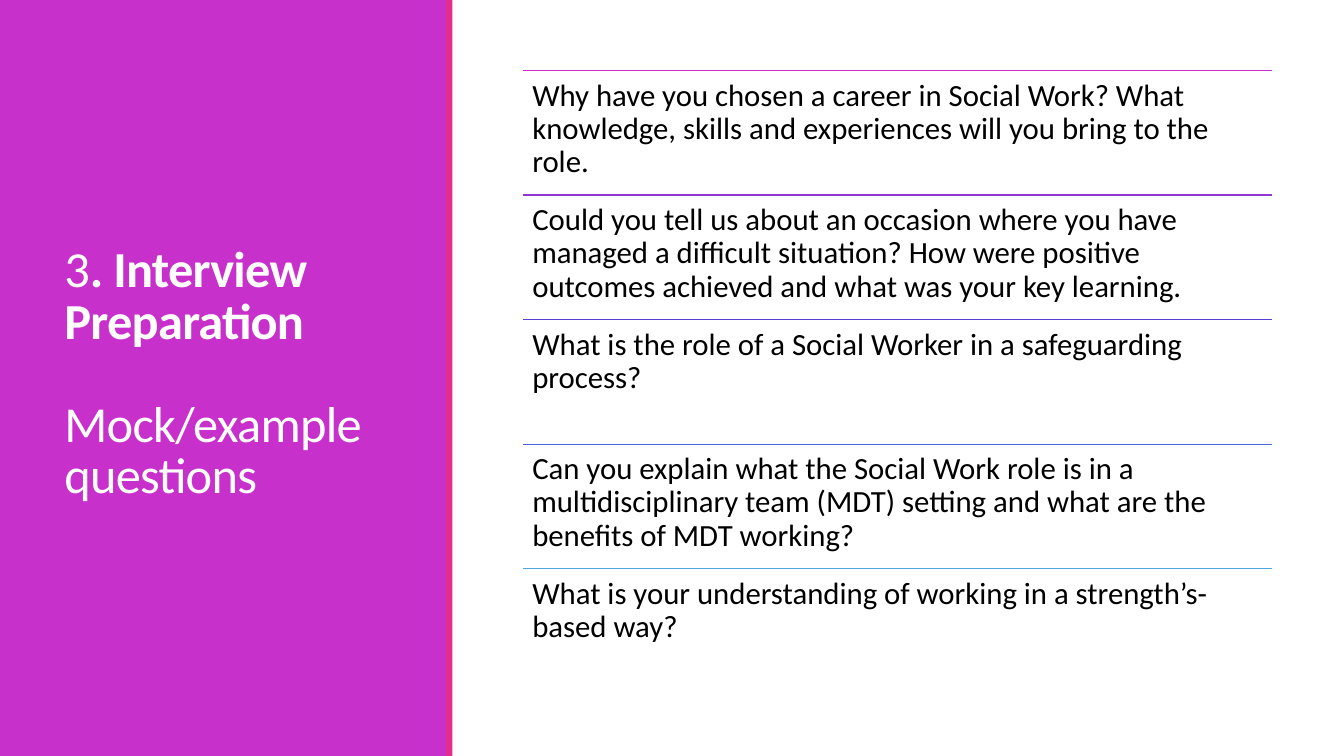
from dataclasses import dataclass

from lxml import etree
from pptx import Presentation
from pptx import util as u
from pptx.dml.color import RGBColor
from pptx.enum import shapes, text
from pptx.oxml.ns import qn

PURPLE = RGBColor(0xC8, 0x30, 0xCC)
PINK = RGBColor(0xE3, 0x2D, 0x91)
VIOLET = RGBColor(0x90, 0x36, 0xD2)
INDIGO = RGBColor(0x59, 0x3E, 0xD5)
BLUE = RGBColor(0x46, 0x66, 0xD9)
SKY = RGBColor(0x4E, 0xA6, 0xDC)
WHITE = RGBColor(0xFF, 0xFF, 0xFF)
BLACK = RGBColor(0x00, 0x00, 0x00)
FONT = "Calibri"

prs = Presentation()
prs.slide_width, prs.slide_height = u.Inches(13.33), u.Inches(7.5)
s = prs.slides.add_slide(prs.slide_layouts[6])


@dataclass
class Box:
    """An area in percent of the slide's width and height."""
    left: float
    top: float
    width: float
    height: float

    def emu(self) -> tuple[int, int, int, int]:
        w, h = prs.slide_width / 100, prs.slide_height / 100
        return (round(self.left * w), round(self.top * h),
                round(self.width * w), round(self.height * h))


@dataclass
class Question:
    wording: str
    rule_color: RGBColor


PANEL = Box(0, 0, 33.23, 100)
STRIPE = Box(33.16, 0, 0.5, 100)
TITLE = Box(4.05, 7.6, 25.28, 84.13)
FIRST_ROW = Box(38.93, 9.33, 55.74, 16.47)

QUESTIONS = [
    Question("Why have you chosen a career in Social Work? What knowledge, "
             "skills and experiences will you bring to the role.", PURPLE),
    Question("Could you tell us about an occasion where you have managed a "
             "difficult situation? How were positive outcomes achieved and "
             "what was your key learning.", VIOLET),
    Question("What is the role of a Social Worker in a safeguarding process?",
             INDIGO),
    Question("Can you explain what the Social Work role is in a "
             "multidisciplinary team (MDT) setting and what are the benefits "
             "of MDT working?", BLUE),
    Question("What is your understanding of working in a strength’s-based way?",
             SKY),
]


def add_block(box: Box, color: RGBColor) -> None:
    sp = s.shapes.add_shape(shapes.MSO_SHAPE.RECTANGLE, *box.emu())
    sp.shadow.inherit = False
    sp.fill.solid()
    sp.fill.fore_color.rgb = color
    sp.line.fill.background()


def add_frame(box: Box, anchor: text.MSO_ANCHOR, inset: float):
    tf = s.shapes.add_textbox(*box.emu()).text_frame
    tf.word_wrap = True
    tf.vertical_anchor = anchor
    tf.margin_left = tf.margin_right = u.Inches(inset)
    tf.margin_top = tf.margin_bottom = u.Inches(inset)
    return tf


def add_run(p, words: str, size: int, color: RGBColor, bold: bool = False):
    r = p.add_run()
    r.text = words
    r.font.name, r.font.size, r.font.bold = FONT, u.Pt(size), bold
    r.font.color.rgb = color
    return r


def add_rule(box: Box, color: RGBColor) -> None:
    left, top, width, _ = box.emu()
    rule = s.shapes.add_connector(shapes.MSO_CONNECTOR.STRAIGHT,
                                  left, top, left + width, top)
    rule.line.color.rgb = color
    rule.line.width = u.Pt(0.75)
    etree.SubElement(rule._element.spPr, qn("a:effectLst"))


# Side panel
add_block(PANEL, PURPLE)
add_block(STRIPE, PINK)

# Title: the subtitle stands one line below the heading
tf = add_frame(TITLE, text.MSO_ANCHOR.MIDDLE, 0.1)
heading, subtitle = tf.paragraphs[0], tf.add_paragraph()
subtitle.space_before = u.Pt(37)
for p, words, bold in [(heading, "3", False),
                       (heading, ". Interview Preparation", True),
                       (subtitle, "Mock/example questions", False)]:
    p.line_spacing = 0.85
    r = add_run(p, words, 36, WHITE, bold)
    r._r.get_or_add_rPr().set("spc", "-50")

# Questions, each under its own rule
for i, question in enumerate(QUESTIONS):
    row = Box(FIRST_ROW.left, FIRST_ROW.top + i * FIRST_ROW.height,
              FIRST_ROW.width, FIRST_ROW.height)
    add_rule(row, question.rule_color)
    p = add_frame(row, text.MSO_ANCHOR.TOP, 0.09).paragraphs[0]
    p.line_spacing = 0.9
    add_run(p, question.wording, 22, BLACK)

prs.save("out.pptx")
